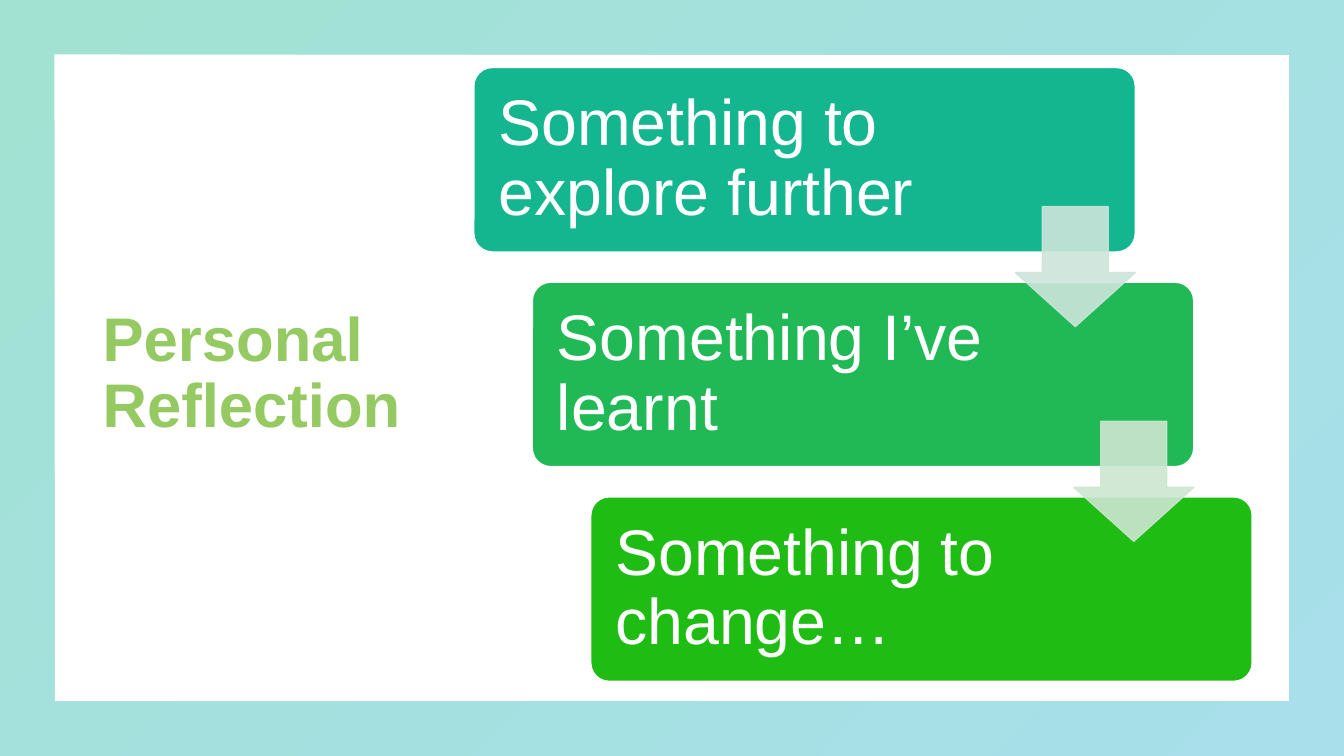
from lxml.etree import SubElement
from pptx import Presentation
from pptx.dml.color import RGBColor
from pptx.enum.shapes import MSO_SHAPE
from pptx.enum.text import MSO_ANCHOR, PP_ALIGN
from pptx.oxml.ns import qn
from pptx.util import Inches, Pt

WHITE = RGBColor(0xFF, 0xFF, 0xFF)
HEADING_GREEN = RGBColor(0x95, 0xCA, 0x62)
FRAME_MINT = RGBColor(0xA1, 0xE2, 0xD3)
FRAME_SKY = RGBColor(0xA8, 0xDF, 0xEB)
TEAL = RGBColor(0x14, 0xB6, 0x90)
GREEN = RGBColor(0x21, 0xB8, 0x56)
LEAF = RGBColor(0x1F, 0xBC, 0x14)
PALE_TEAL = RGBColor(0xCC, 0xE5, 0xDB)
PALE_GREEN = RGBColor(0xCD, 0xE6, 0xD1)

prs = Presentation()
prs.slide_width = Inches(13.33)
prs.slide_height = Inches(7.5)
slide = prs.slides.add_slide(prs.slide_layouts[6])


def add_block(kind, left, top, width, height, adjustments):
    block = slide.shapes.add_shape(
        kind, Inches(left), Inches(top), Inches(width), Inches(height))
    block.shadow.inherit = False
    for index, value in enumerate(adjustments):
        block.adjustments[index] = value
    return block


def write(holder, text, size, color, bold=False):
    frame = holder.text_frame
    frame.word_wrap = True
    frame.vertical_anchor = MSO_ANCHOR.MIDDLE
    frame.text = text
    paragraph = frame.paragraphs[0]
    paragraph.alignment = PP_ALIGN.LEFT
    paragraph.line_spacing = 0.9
    font = paragraph.runs[0].font
    font.name, font.size, font.bold = "Arial", Pt(size), bold
    font.color.rgb = color


border = add_block(MSO_SHAPE.FRAME, 0, 0, 13.33, 7.5, [0.072])
border.line.fill.background()
border.fill.gradient()
border.fill.gradient_angle = 315
for stop, color in zip(border.fill.gradient_stops, (FRAME_MINT, FRAME_SKY)):
    stop.color.rgb = color

heading = slide.shapes.add_textbox(Inches(0.92), Inches(0.67), Inches(3.5), Inches(6.09))
write(heading, "Personal Reflection", 44, HEADING_GREEN, bold=True)

STEP_LEFT, STEP_TOP, STEP_WIDTH, STEP_HEIGHT = 4.7, 0.67, 6.56, 1.83
SHIFT_X, SHIFT_Y = 0.58, 2.13
ARROW_SIZE = 1.19

steps = [
    ("Something to explore further", TEAL),
    ("Something I’ve learnt", GREEN),
    ("Something to change…", LEAF),
]
for row, (text, color) in enumerate(steps):
    step = add_block(
        MSO_SHAPE.ROUNDED_RECTANGLE, STEP_LEFT + row * SHIFT_X, STEP_TOP + row * SHIFT_Y,
        STEP_WIDTH, STEP_HEIGHT, [0.1])
    step.fill.solid()
    step.fill.fore_color.rgb = color
    step.line.color.rgb = WHITE
    step.line.width = Pt(1)
    write(step, text, 46, WHITE)
    step.text_frame.margin_left = Inches(0.19)
    step.text_frame.margin_right = Inches(1.96)

for row, color in enumerate((PALE_TEAL, PALE_GREEN)):
    arrow = add_block(
        MSO_SHAPE.DOWN_ARROW, STEP_LEFT + STEP_WIDTH - ARROW_SIZE + row * SHIFT_X,
        2.05 + row * SHIFT_Y, ARROW_SIZE, ARROW_SIZE, [0.55, 0.45])
    arrow.fill.solid()
    arrow.fill.fore_color.rgb = color
    arrow.line.color.rgb = color
    arrow.line.width = Pt(1)
    for tint in arrow.element.spPr.iter(qn("a:srgbClr")):
        SubElement(tint, qn("a:alpha")).set("val", "90000")

prs.save("out.pptx")
